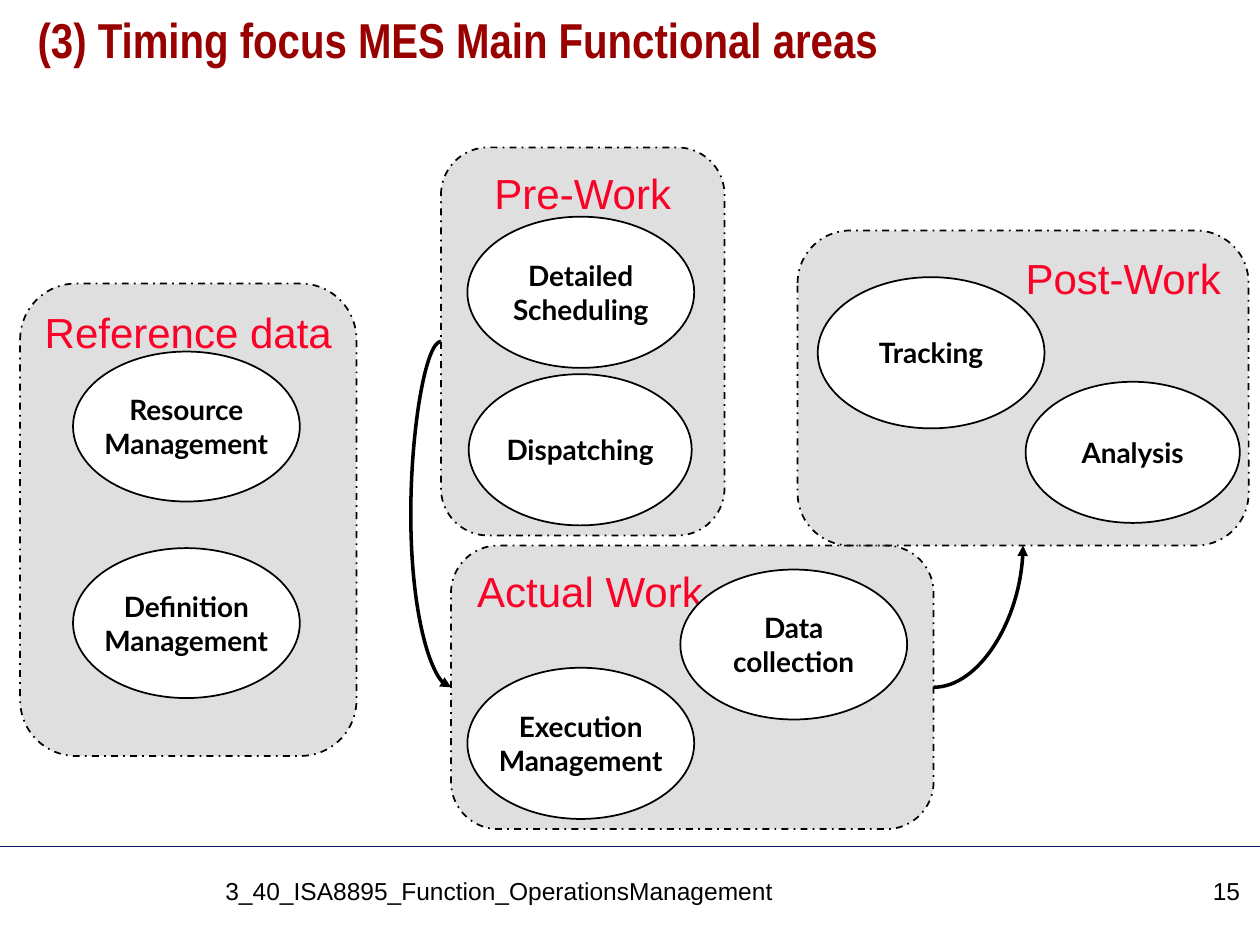
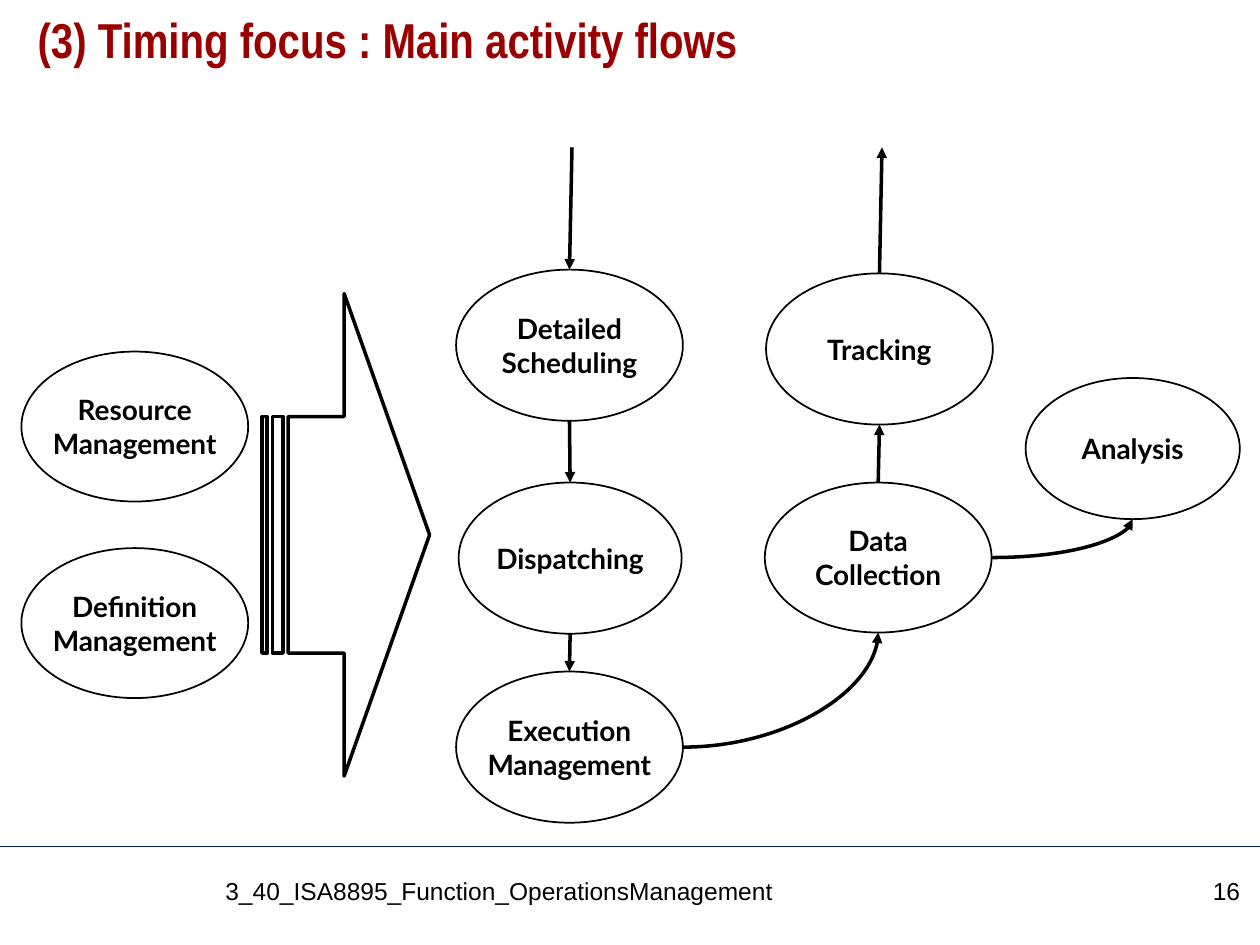
from dataclasses import dataclass

from lxml import etree
from pptx import Presentation
from pptx.dml.color import RGBColor
from pptx.enum.dml import MSO_LINE
from pptx.enum.shapes import MSO_CONNECTOR, MSO_SHAPE
from pptx.enum.text import MSO_ANCHOR, PP_ALIGN
from pptx.oxml.ns import qn
from pptx.util import Inches, Pt

LEFT, CENTER, RIGHT = PP_ALIGN.LEFT, PP_ALIGN.CENTER, PP_ALIGN.RIGHT
TOP, MIDDLE = MSO_ANCHOR.TOP, MSO_ANCHOR.MIDDLE
OVAL, ROUND = MSO_SHAPE.OVAL, MSO_SHAPE.ROUNDED_RECTANGLE
STRIPED = MSO_SHAPE.STRIPED_RIGHT_ARROW
STRAIGHT, CURVE = MSO_CONNECTOR.STRAIGHT, MSO_CONNECTOR.CURVE
DASH = MSO_LINE.DASH_DOT

# Sides in the order of the connection sites, as fractions of the box
SIDES = {"top": (0.5, 0), "left": (0, 0.5), "bottom": (0.5, 1), "right": (1, 0.5)}

FOOTER = "3_40_ISA8895_Function_OperationsManagement"

# Activities: label, width, height
NODES = {
    "resource": ("Resource\nManagement", 1.8, 1.19),
    "define": ("Definition\nManagement", 1.8, 1.19),
    "detail": ("Detailed\nScheduling", 1.8, 1.2),
    "dispatch": ("Dispatching", 1.77, 1.2),
    "execute": ("Execution\nManagement", 1.8, 1.2),
    "track": ("Tracking", 1.8, 1.2),
    "analyse": ("Analysis", 1.7, 1.12),
    "collect": ("Data\ncollection", 1.8, 1.19),
    "gather": ("Data\nCollection", 1.8, 1.19),
}


@dataclass(frozen=True)
class Font:
    name: str
    size: int
    color: str
    bold: bool = False


@dataclass(frozen=True)
class Theme:
    ink: str = "000000"
    paper: str = "FFFFFF"
    panel: str = "C0C0C0"
    rule: str = "002060"
    title: Font = Font("Arial Narrow", 28, "990000", True)
    head: Font = Font("Arial", 24, "FC0128")
    node: Font = Font("Lato", 16, "000000", True)
    foot: Font = Font("Arial", 14, "000000")


def rgb(code):
    return RGBColor.from_string(code)


def inches(*values):
    return [Inches(v) for v in values]


class Deck:
    def __init__(self, theme):
        self.theme = theme
        self.prs = Presentation()
        self.prs.slide_width, self.prs.slide_height = inches(10, 7.5)
        self.slide = None

    def page(self, title, number):
        """Start a slide with its title, rule and footer."""
        t = self.theme
        self.slide = self.prs.slides.add_slide(self.prs.slide_layouts[6])
        self.line(STRAIGHT, inches(0, 6.72), inches(10, 6.72), t.rule, 0.75)
        frame = self.label((0.2, 0.08, 9.61, 0.83), title, t.title)
        frame.paragraphs[0].line_spacing = 0.9
        self.label((1.69, 6.9, 7.21, 0.45), FOOTER, t.foot)
        self.label((9.02, 6.9, 0.92, 0.45), str(number), t.foot, RIGHT)

    def words(self, frame, text, font, align, anchor, wrap):
        frame.text = text
        frame.word_wrap = wrap
        frame.vertical_anchor = anchor
        for para in frame.paragraphs:
            para.alignment = align
            for run in para.runs:
                run.font.name = font.name
                run.font.size = Pt(font.size)
                run.font.bold = font.bold
                run.font.color.rgb = rgb(font.color)

    def label(self, box, text, font, align=LEFT):
        frame = self.slide.shapes.add_textbox(*inches(*box)).text_frame
        self.words(frame, text, font, align, TOP, True)
        return frame

    def shape(self, kind, box, fill=None, width=1):
        shape = self.slide.shapes.add_shape(kind, *inches(*box))
        shape.shadow.inherit = False
        if fill:
            shape.fill.solid()
            shape.fill.fore_color.rgb = rgb(fill)
        else:
            shape.fill.background()
        shape.line.color.rgb = rgb(self.theme.ink)
        shape.line.width = Pt(width)
        return shape

    def panel(self, box, text, align=CENTER):
        """Half-transparent dashed area with a heading."""
        shape = self.shape(ROUND, box, self.theme.panel)
        shape.line.dash_style = DASH
        color = shape._element.spPr.find(qn("a:solidFill")).find(qn("a:srgbClr"))
        etree.SubElement(color, qn("a:alpha"), val="50000")
        self.words(shape.text_frame, text, self.theme.head, align, TOP, False)
        return shape

    def nodes(self, places):
        """Draw activity ovals and return them by key."""
        ovals = {}
        for key, (left, top) in places.items():
            text, wide, high = NODES[key]
            oval = self.shape(OVAL, (left, top, wide, high), self.theme.paper)
            self.words(oval.text_frame, text, self.theme.node, CENTER, MIDDLE, False)
            ovals[key] = oval
        return ovals

    def block(self, box, *adjust):
        shape = self.shape(STRIPED, box, width=2)
        for i, value in enumerate(adjust):
            shape.adjustments[i] = value

    def line(self, kind, start, end, color, width):
        line = self.slide.shapes.add_connector(kind, *start, *end)
        line.line.color.rgb = rgb(color)
        line.line.width = Pt(width)
        etree.SubElement(line._element.spPr, qn("a:effectLst"))
        return line

    def arrow(self, start, end, kind=STRAIGHT):
        line = self.line(kind, start, end, self.theme.ink, 2)
        stroke = line._element.spPr.find(qn("a:ln"))
        etree.SubElement(stroke, qn("a:tailEnd"), type="triangle")
        return line

    def spot(self, shape, side):
        x, y = SIDES[side]
        return [int(shape.left + x * shape.width), int(shape.top + y * shape.height)]

    def join(self, a, start, b, end, kind=STRAIGHT, bend=None):
        """Arrow glued to two shapes; a curve without bend is a quarter turn."""
        line = self.arrow(self.spot(a, start), self.spot(b, end), kind)
        ends = line._element.nvCxnSpPr.cNvCxnSpPr
        glue = ((ends.get_or_add_stCxn(), a, start), (ends.get_or_add_endCxn(), b, end))
        for link, shape, side in glue:
            step = 2 if shape.auto_shape_type == OVAL else 1
            link.id = shape.shape_id
            link.idx = step * list(SIDES).index(side)
        if kind == CURVE:
            geom = line._element.spPr.find(qn("a:prstGeom"))
            if bend is None:
                geom.set("prst", "curvedConnector2")
            else:
                guide = etree.SubElement(geom.find(qn("a:avLst")), qn("a:gd"))
                guide.set("name", "adj1")
                guide.set("fmla", f"val {bend * 100000}")


def areas(deck):
    deck.page("(3) Timing focus MES Main Functional areas", 15)

    # Work phases
    deck.panel((0.16, 2.25, 2.67, 3.75), "Reference data")
    work = deck.panel((3.58, 4.33, 3.83, 2.25), "Actual Work", LEFT)
    pre = deck.panel((3.5, 1.17, 2.25, 3.08), "Pre-Work")
    post = deck.panel((6.33, 1.83, 3.58, 2.5), "Post-Work", RIGHT)

    # Activities in each phase
    deck.nodes({
        "resource": (0.58, 2.79), "analyse": (8.14, 3.03), "collect": (5.4, 4.52),
        "execute": (3.71, 5.3), "dispatch": (3.72, 2.97), "track": (6.49, 2.2),
        "define": (0.58, 4.35), "detail": (3.71, 1.72),
    })

    # Order of the phases
    deck.join(pre, "left", work, "left", CURVE, bend=-3)
    deck.join(work, "right", post, "bottom", CURVE)


def flows(deck):
    deck.page("(3) Timing focus : Main activity flows", 16)
    n = deck.nodes({
        "resource": (0.17, 2.79), "analyse": (8.14, 3), "gather": (6.07, 3.83),
        "execute": (3.62, 5.33), "dispatch": (3.64, 3.83), "track": (6.08, 2.17),
        "detail": (3.62, 2.14), "define": (0.17, 4.35),
    })

    # Flow between activities
    deck.join(n["detail"], "bottom", n["dispatch"], "top")
    deck.join(n["dispatch"], "bottom", n["execute"], "top")
    deck.join(n["gather"], "top", n["track"], "bottom")
    deck.join(n["execute"], "right", n["gather"], "bottom", CURVE)
    deck.join(n["gather"], "right", n["analyse"], "bottom", CURVE)

    # Flow in and out, and the reference data feed
    deck.arrow(inches(4.54, 1.17), deck.spot(n["detail"], "top"))
    deck.arrow(deck.spot(n["track"], "top"), inches(7, 1.17))
    deck.block((2.08, 2.33, 1.33, 3.83), 0.49, 0.51)


def main():
    deck = Deck(Theme())
    areas(deck)
    flows(deck)
    deck.prs.save("out.pptx")


if __name__ == "__main__":
    main()
